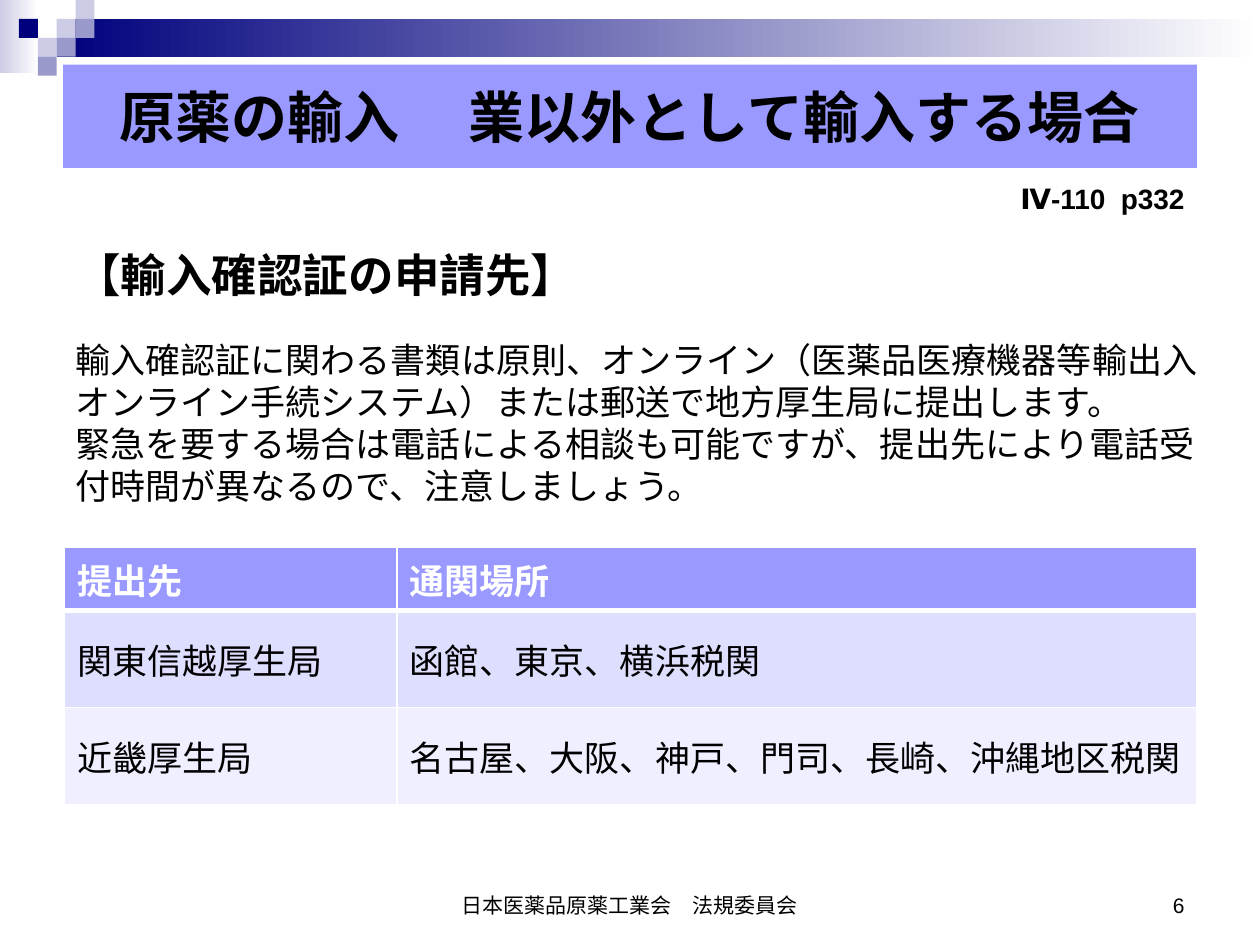
from dataclasses import dataclass

from lxml.etree import SubElement
from pptx import Presentation
from pptx.dml.color import RGBColor
from pptx.enum.shapes import MSO_SHAPE
from pptx.enum.text import MSO_ANCHOR, PP_ALIGN
from pptx.oxml.ns import qn
from pptx.util import Pt

HUES = {
    "navy": "00007D", "mist": "CCCCE6", "slate": "9999CC", "lilac": "9999FF",
    "pale": "DEDEFF", "faint": "EFEFFF", "white": "FFFFFF", "black": "000000",
}
STEP = 10.8


@dataclass
class Style:
    size: float
    bold: bool = False
    hue: str = "black"
    align: PP_ALIGN = PP_ALIGN.LEFT
    anchor: MSO_ANCHOR = MSO_ANCHOR.TOP
    before: float = 0
    line: float = 1.0


@dataclass
class Note:
    box: tuple[float, float, float, float]
    lines: list[str]
    style: Style


@dataclass
class Tile:
    col: int
    row: int
    hue: str


@dataclass
class Band:
    box: tuple[float, float, float, float]
    hue: str


@dataclass
class Row:
    cells: tuple[str, str]
    high: float
    fill: str
    style: Style


def tint(name: str) -> RGBColor:
    return RGBColor.from_string(HUES[name])


def write(frame, lines: list[str], style: Style) -> None:
    frame.word_wrap = True
    frame.vertical_anchor = style.anchor
    for i, line in enumerate(lines):
        para = frame.add_paragraph() if i else frame.paragraphs[0]
        para.alignment = style.align
        para.space_before = Pt(style.before)
        para.line_spacing = style.line
        run = para.add_run()
        run.text = line
        font = run.font
        font.name = "Arial"
        font.size = Pt(style.size)
        font.bold = style.bold
        font.color.rgb = tint(style.hue)


def add_rect(slide, box: tuple):
    shape = slide.shapes.add_shape(MSO_SHAPE.RECTANGLE, *map(Pt, box))
    shape.shadow.inherit = False
    shape.line.fill.background()
    return shape


def add_tile(slide, tile: Tile) -> None:
    shape = add_rect(slide, (tile.col * STEP, tile.row * STEP, STEP, STEP))
    shape.fill.solid()
    shape.fill.fore_color.rgb = tint(tile.hue)


def add_band(slide, band: Band) -> None:
    """Draw a bar that fades to white on its right."""
    fill = add_rect(slide, band.box).fill
    fill.gradient()
    fill.gradient_angle = 0
    for stop, hue in zip(fill.gradient_stops, (band.hue, "white")):
        stop.color.rgb = tint(hue)


def add_note(slide, note: Note) -> None:
    box = slide.shapes.add_textbox(*map(Pt, note.box))
    write(box.text_frame, note.lines, note.style)


def set_title(slide, text: str) -> None:
    title = slide.shapes.title
    title.left, title.top, title.width, title.height = map(Pt, (36, 37, 648, 59))
    title.fill.solid()
    title.fill.fore_color.rgb = tint("lilac")
    write(title.text_frame, [text],
          Style(32, True, align=PP_ALIGN.CENTER, anchor=MSO_ANCHOR.MIDDLE))


def edge(cell, sides: dict[str, float]) -> None:
    """Give the cell white borders of the given widths."""
    props = cell._tc.get_or_add_tcPr()
    for side, wide in sides.items():
        line = SubElement(props, qn(f"a:ln{side}"), w=str(Pt(wide)))
        fill = SubElement(line, qn("a:solidFill"))
        SubElement(fill, qn("a:srgbClr"), val=HUES["white"])


def add_grid(slide, rows: list[Row], cols: tuple[float, ...]) -> None:
    high = sum(row.high for row in rows)
    frame = slide.shapes.add_table(len(rows), len(cols), Pt(36.9), Pt(312.7),
                                   Pt(sum(cols)), Pt(high))
    table = frame.table
    for col, wide in zip(table.columns, cols):
        col.width = Pt(wide)
    for r, row in enumerate(rows):
        table.rows[r].height = Pt(row.high)
        for c, text in enumerate(row.cells):
            cell = table.cell(r, c)
            edge(cell, {"L": 1, "R": 1, "T": 3 if r == 1 else 1,
                        "B": 3 if r == 0 else 1})
            cell.fill.solid()
            cell.fill.fore_color.rgb = tint(row.fill)
            cell.vertical_anchor = MSO_ANCHOR.MIDDLE
            write(cell.text_frame, [text], row.style)


BANDS = [
    Band((0, 0, 22, 42), "mist"),
    Band((3 * STEP, STEP, 720 - 3 * STEP, 21.6), "navy"),
]
TILES = [
    Tile(3, 1, "mist"), Tile(4, 0, "mist"), Tile(4, 1, "slate"),
    Tile(2, 2, "mist"), Tile(1, 1, "navy"), Tile(3, 2, "slate"),
    Tile(2, 3, "slate"),
]
MID = MSO_ANCHOR.MIDDLE
LOW = MSO_ANCHOR.BOTTOM
HEAD = Style(20, True, "white", anchor=MID)
BODY = Style(20, anchor=MID)
ROWS = [
    Row(("提出先", "通関場所"), 31, "lilac", HEAD),
    Row(("関東信越厚生局", "函館、東京、横浜税関"), 55.4, "pale", BODY),
    Row(("近畿厚生局", "名古屋、大阪、神戸、門司、長崎、沖縄地区税関"), 55.4, "faint", BODY),
]
NOTES = [
    Note((246, 492, 228, 36), ["日本医薬品原薬工業会　法規委員会"],
         Style(12, align=PP_ALIGN.CENTER, anchor=LOW)),
    Note((516, 492, 168, 36), ["6"],
         Style(12, align=PP_ALIGN.RIGHT, anchor=LOW)),
    Note((36, 190, 666, 104.4), [
        "輸入確認証に関わる書類は原則、オンライン（医薬品医療機器等輸出入"
        "オンライン手続システム）または郵送で地方厚生局に提出します。",
        "緊急を要する場合は電話による相談も可能ですが、提出先により電話受"
        "付時間が異なるので、注意しましょう。",
    ], Style(20)),
    Note((36, 137.5, 398, 38), ["【輸入確認証の申請先】"],
         Style(26, True, before=5.2)),
    Note((543.6, 103.7, 140.4, 23), ["Ⅳ-110  p332"],
         Style(16, True, align=PP_ALIGN.RIGHT, before=3.2, line=0.8)),
]


def main() -> None:
    deck = Presentation()
    deck.slide_width, deck.slide_height = Pt(720), Pt(540)
    slide = deck.slides.add_slide(deck.slide_layouts[5])
    for band in BANDS:
        add_band(slide, band)
    for tile in TILES:
        add_tile(slide, tile)
    set_title(slide, "原薬の輸入 　業以外として輸入する場合")
    add_grid(slide, ROWS, (190, 457.2))
    for note in NOTES:
        add_note(slide, note)
    deck.save("out.pptx")


if __name__ == "__main__":
    main()
